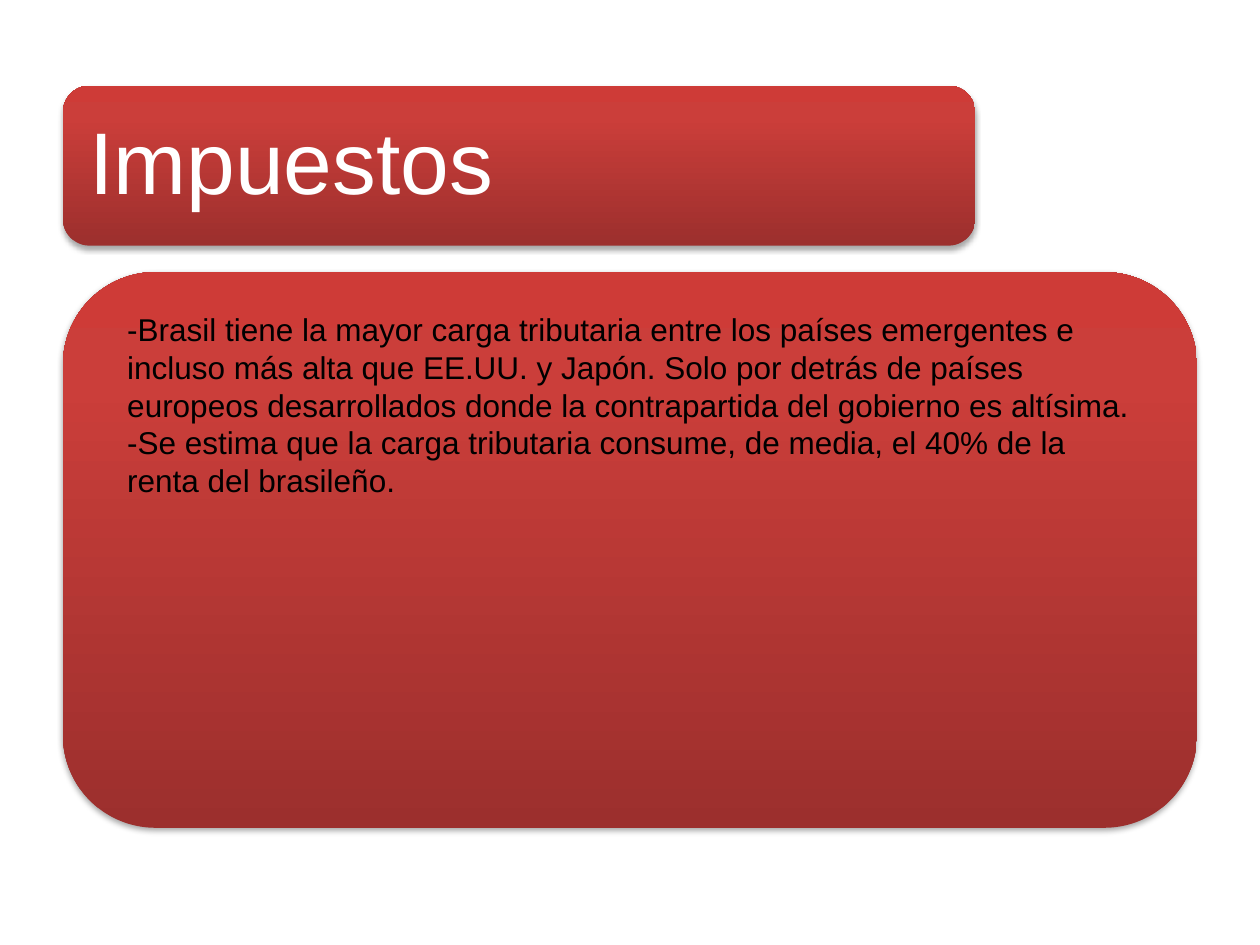
from lxml import etree
from pptx import Presentation
from pptx.dml.color import RGBColor
from pptx.enum.shapes import MSO_SHAPE
from pptx.enum.text import MSO_ANCHOR, MSO_AUTO_SIZE, PP_ALIGN
from pptx.oxml import parse_xml
from pptx.oxml.ns import nsdecls, qn
from pptx.util import Inches, Pt

ROUNDED = MSO_SHAPE.ROUNDED_RECTANGLE
TOP, MIDDLE = MSO_ANCHOR.TOP, MSO_ANCHOR.MIDDLE
LEFT, NO_FIT = PP_ALIGN.LEFT, MSO_AUTO_SIZE.NONE

# Content
TITLE = ["Impuestos"]
BODY = [
    "-Brasil tiene la mayor carga tributaria entre los países emergentes e "
    "incluso más alta que EE.UU. y Japón. Solo por detrás de países europeos "
    "desarrollados donde la contrapartida del gobierno es altísima.",
    "-Se estima que la carga tributaria consume, de media, el 40% de la renta "
    "del brasileño.",
]

# Layout in inches: left, top, width, height
WIDTH, HEIGHT = 10, 7.5
MARGIN = 0.5
TITLE_BOX = (MARGIN, 0.68, 7.24, 1.27)
BODY_PANEL = (MARGIN, 2.16, WIDTH - 2 * MARGIN, 4.41)
BODY_BOX = (0.91, 2.41, 8.27, 1.62)

FONT = "Arial"
STOPS = [(0, "9C2F2D"), (80, "CB3E3A"), (100, "CE3B37")]


def color(value):
    return RGBColor.from_string(value)


def add_panel(s, box):
    """Rounded panel with a red gradient, darkest at the foot, and a soft shadow."""
    sp = s.shapes.add_shape(ROUNDED, *map(Inches, box))
    sp.line.fill.background()
    stops = "".join(
        f'<a:gs pos="{pos * 1000}"><a:srgbClr val="{value}"/></a:gs>'
        for pos, value in STOPS)
    sp.fill.background()
    props = sp._element.spPr
    props.replace(props.find(qn("a:noFill")), parse_xml(
        f'<a:gradFill {nsdecls("a")} rotWithShape="1"><a:gsLst>{stops}</a:gsLst>'
        '<a:lin ang="16200000" scaled="0"/></a:gradFill>'))
    props.append(parse_xml(
        f'<a:effectLst {nsdecls("a")}><a:outerShdw blurRad="{Pt(3.1)}" '
        f'dist="{Pt(1.8)}" dir="5400000" rotWithShape="0"><a:srgbClr val="000000">'
        '<a:alpha val="35000"/></a:srgbClr></a:outerShdw></a:effectLst>'))


def fill_text(sp, box, lines, size, value, anchor, insets, spacing=1.0):
    sp.left, sp.top, sp.width, sp.height = map(Inches, box)
    tf = sp.text_frame
    tf.word_wrap, tf.auto_size, tf.vertical_anchor = True, NO_FIT, anchor
    tf.margin_left = tf.margin_right = Inches(insets[0])
    tf.margin_top = tf.margin_bottom = Inches(insets[1])
    for i, line in enumerate(lines):
        p = tf.paragraphs[0] if i == 0 else tf.add_paragraph()
        props = p._p.get_or_add_pPr()
        props.set("marL", "0")
        props.set("indent", "0")
        etree.SubElement(props, qn("a:buNone"))
        p.alignment, p.line_spacing = LEFT, spacing
        p.space_before = p.space_after = Pt(0)
        r = p.add_run()
        r.text = line
        r.font.name, r.font.size = FONT, Pt(size)
        r.font.color.rgb = color(value)


prs = Presentation()
prs.slide_width, prs.slide_height = Inches(WIDTH), Inches(HEIGHT)
s = prs.slides.add_slide(prs.slide_layouts[1])
title, body = s.placeholders

# Panels, with the text brought in front of them
for box in (TITLE_BOX, BODY_PANEL):
    add_panel(s, box)
for sp in (title, body):
    s.shapes._spTree.append(sp._element)

# Title and body text
fill_text(title, TITLE_BOX, TITLE, 50, "FFFFFF", MIDDLE, (0.21, 0.21), 0.9)
fill_text(body, BODY_BOX, BODY, 18, "000000", TOP, (0.1, 0.05))

prs.save("out.pptx")
